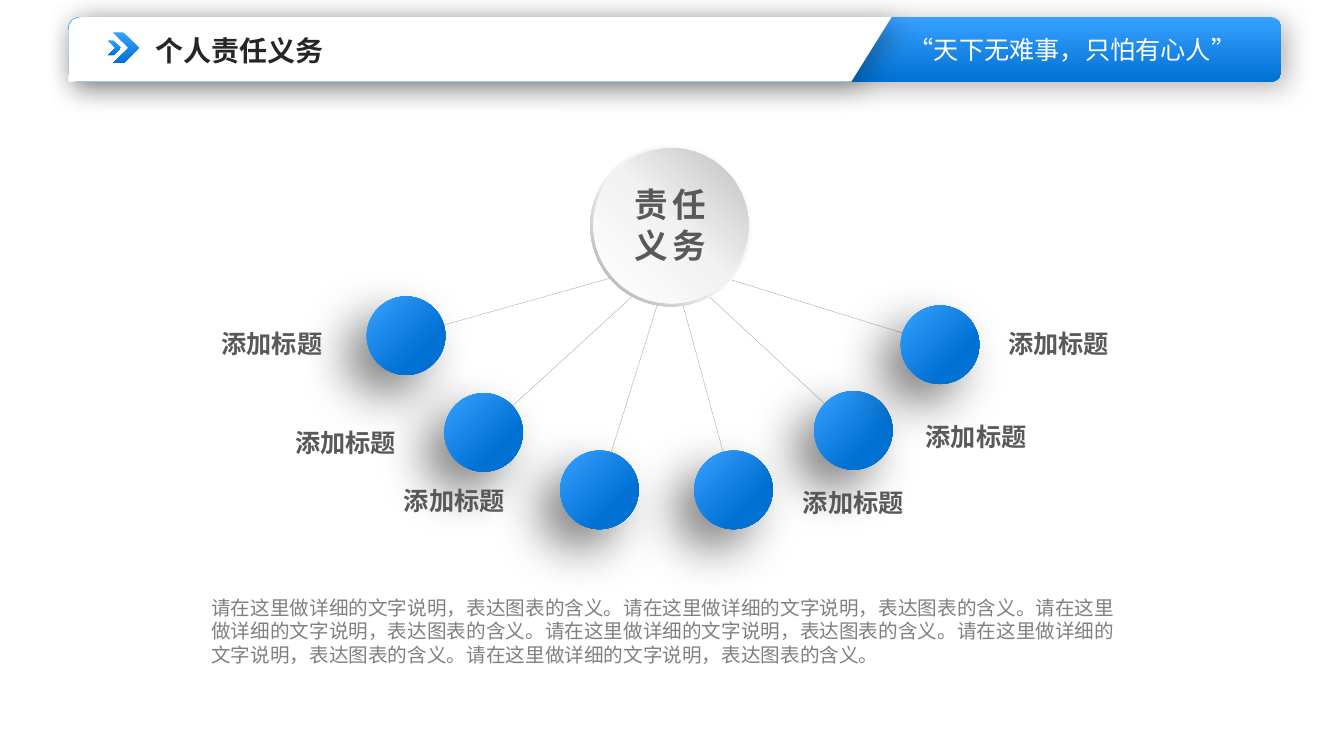
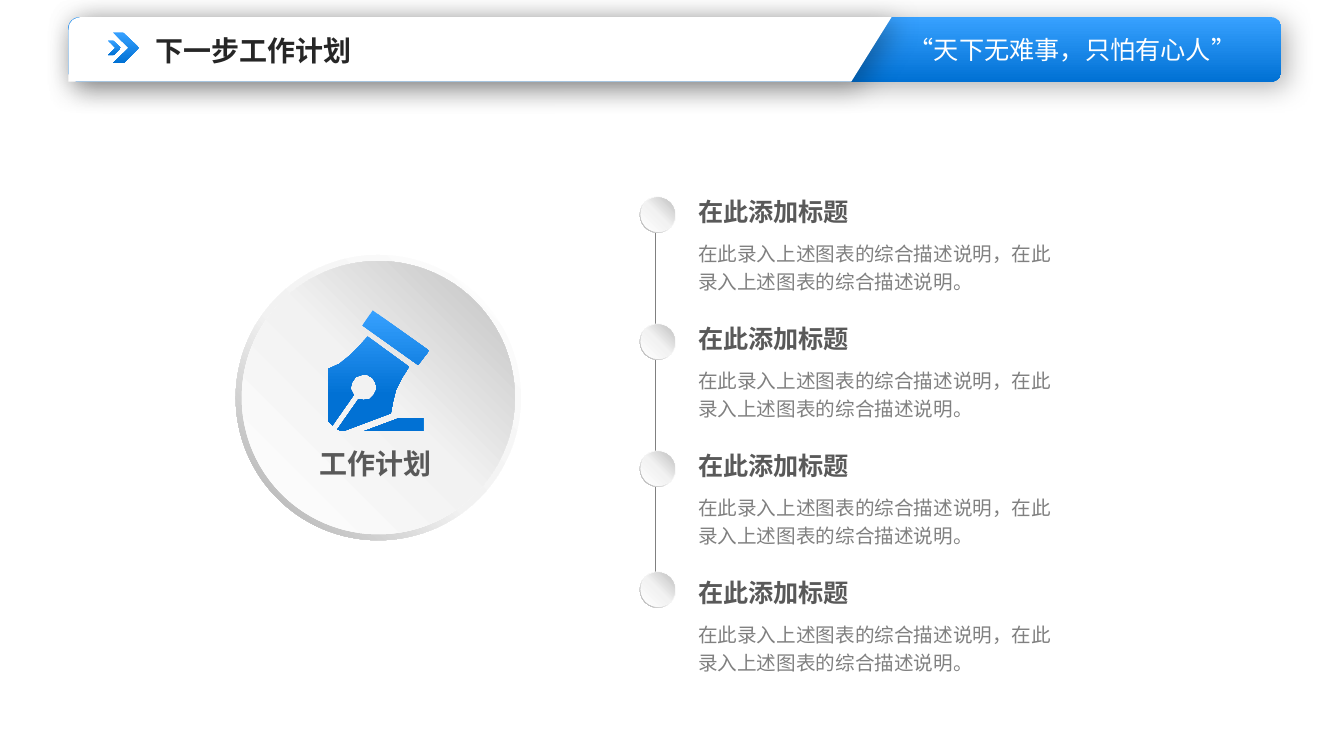
import pptx
import pptx.util
import pptx.oxml
import pptx.oxml.ns
import pptx.dml.color
import pptx.enum.shapes
import pptx.enum.text
import lxml.etree

px = 9144  # EMU in one px, 100 px to the inch
qn = pptx.oxml.ns.qn
Pt = pptx.util.Pt
RGB = pptx.dml.color.RGBColor.from_string
Kind = pptx.enum.shapes.MSO_SHAPE
Align = pptx.enum.text.PP_ALIGN


class Theme:
    font = "Noto Sans CJK SC"
    white, ink, dark, grey, pale = "FFFFFF", "262626", "595959", "808080", "A6A6A6"
    # Fills: gradient stops and clockwise angle
    bar = [(0, "37A1FF"), (100, "0171D4")], 90
    ball = [(0, "37A1FF"), (70, "0171D4")], 45
    pen = [(0, "37A1FF"), (70, "0171D4")], 90
    ring = [(0, "FFFFFF"), (55, "F2F2F2"), (100, "A6A6A6")], 135
    disc = [(0, "FFFFFF"), (51, "F2F2F2"), (100, "BFBFBF")], 315
    # Shadows: opacity, blur, distance, angle
    soft = 30, 20, 5, 45
    deep = 50, 35, 20, 135
    # Type sizes
    hub, title, head, body = 24, 20, 18, 14


def paint(shape, fill, shadow=None):
    """Fill a shape with a colour or gradient, without outline."""
    shape.shadow.inherit = False
    shape.line.fill.background()
    props = shape.element.spPr
    if isinstance(fill, str):
        shape.fill.solid()
        shape.fill.fore_color.rgb = RGB(fill)
    else:
        stops, angle = fill
        marks = "".join(f'<a:gs pos="{at * 1000}"><a:srgbClr val="{tint}"/></a:gs>'
                        for at, tint in stops)
        shape.fill.background()
        props.replace(props.find(qn("a:noFill")), pptx.oxml.parse_xml(
            f'<a:gradFill {pptx.oxml.ns.nsdecls("a")} rotWithShape="1"><a:gsLst>{marks}</a:gsLst>'
            f'<a:lin ang="{angle * 60000}" scaled="0"/></a:gradFill>'))
    if shadow:
        alpha, blur, far, turn = shadow
        props.find(qn("a:effectLst")).append(pptx.oxml.parse_xml(
            f'<a:outerShdw {pptx.oxml.ns.nsdecls("a")} blurRad="{Pt(blur)}" dist="{Pt(far)}" '
            f'dir="{turn * 60000}" algn="ctr" rotWithShape="0"><a:srgbClr val="000000">'
            f'<a:alpha val="{alpha * 1000}"/></a:srgbClr></a:outerShdw>'))


def write(slide, box, text, size, tint, bold=False, wrap=True, align=Align.LEFT,
          inset=(10, 5), lead=None, space=None):
    """Add a text box with one style throughout."""
    frame = slide.shapes.add_textbox(*(n * px for n in box)).text_frame
    frame.word_wrap = wrap
    frame.margin_left = frame.margin_right = inset[0] * px
    frame.margin_top = frame.margin_bottom = inset[1] * px
    frame.text = text
    for para in frame.paragraphs:
        para.alignment = align
        if lead:
            para.line_spacing = lead
        for run in para.runs:
            run.font.name = Theme.font
            run.font.size = Pt(size)
            run.font.bold = bold
            run.font.color.rgb = RGB(tint)
            props = run.font._element
            lxml.etree.SubElement(props, qn("a:ea")).set("typeface", Theme.font)
            if space:
                props.set("spc", str(space * 100))


deck = pptx.Presentation()
deck.slide_width, deck.slide_height = 1334 * px, 750 * px
blank = deck.slide_layouts[6]
for holder in list(blank.placeholders):
    holder.element.getparent().remove(holder.element)
duty = deck.slides.add_slide(blank)
plan = deck.slides.add_slide(blank)

# Shared header: drawn once, then moved to the layout
band = duty.shapes.add_shape(Kind.ROUNDED_RECTANGLE, 68 * px, 17 * px, 1204 * px, 64 * px)
paint(band, Theme.bar, Theme.soft)
edge = duty.shapes.build_freeform(80, 17, px)
edge.add_line_segments([(885, 17), (845, 81), (68, 81), (68, 30), (69, 24), (72, 20), (76, 18)])
paint(edge.convert_to_shape(), Theme.white, Theme.soft)
write(duty, (865, 29, 399, 40), "“天下无难事，只怕有心人”", Theme.head, Theme.white,
      align=Align.CENTER)
for x, y, w, h, bend in [(112, 32, 26, 31, 0.61), (107, 40, 13, 15, 0.59)]:
    mark = duty.shapes.add_shape(Kind.CHEVRON, x * px, y * px, w * px, h * px)
    mark.adjustments[0] = bend
    paint(mark, Theme.bar)
for part in list(duty.shapes):
    blank.shapes.element.append(part.element)

# Titles
for slide, title in [(duty, "个人责任义务"), (plan, "下一步工作计划")]:
    write(slide, (147, 29, 244, 41), title, Theme.title, Theme.ink, bold=True, inset=(7, 4))

# Lines: spokes from the hub to each ball, then the timeline
size = 78
balls = [(364, 294), (441, 390), (556, 447), (689, 447), (808, 388), (894, 303)]
links = [(duty, 666, 259, x + size // 2, y + size // 2, Theme.pale, 0.25) for x, y in balls]
step = 126
links += [(plan, 651, 220 + i * step, 651, 328 + i * step, Theme.grey, 0.75) for i in range(3)]
for slide, x1, y1, x2, y2, tint, width in links:
    link = slide.shapes.add_connector(pptx.enum.shapes.MSO_CONNECTOR.STRAIGHT,
                                      x1 * px, y1 * px, x2 * px, y2 * px)
    link.line.color.rgb = RGB(tint)
    link.line.width = Pt(width)
    lxml.etree.SubElement(link.element.spPr, qn("a:effectLst"))

# Balls and their labels
for x, y in balls:
    ball = duty.shapes.add_shape(Kind.OVAL, x * px, y * px, size * px, size * px)
    paint(ball, Theme.ball, Theme.deep)
for x, y in [(210, 321), (283, 419), (391, 477), (787, 479), (909, 413), (991, 321)]:
    write(duty, (x, y, 121, 40), "添加标题", Theme.head, Theme.dark, bold=True, wrap=False)

# Silver dials: a rim and a disc inside it
dials = [(duty, 586, 144, 160), (plan, 234, 253, 283)]
dials += [(plan, 635, y, 36) for y in (195, 321, 447, 567)]
for slide, x, y, wide in dials:
    rim = slide.shapes.add_shape(Kind.DONUT, x * px, y * px, wide * px, wide * px)
    rim.adjustments[0] = 0.05
    paint(rim, Theme.ring)
    gap = round(wide * 0.02)
    core = wide - 2 * gap
    disc = slide.shapes.add_shape(Kind.OVAL, (x + gap) * px, (y + gap) * px, core * px, core * px)
    paint(disc, Theme.disc)

# Duty slide: hub and description
write(duty, (620, 178, 96, 91), "责任\n义务", Theme.hub, Theme.dark, bold=True, wrap=False, space=3)
write(duty, (200, 586, 1097, 81),
      "请在这里做详细的文字说明，表达图表的含义。请在这里做详细的文字说明，表达图表的含义。请在这里\n"
      "做详细的文字说明，表达图表的含义。请在这里做详细的文字说明，表达图表的含义。请在这里做详细的\n"
      "文字说明，表达图表的含义。请在这里做详细的文字说明，表达图表的含义。",
      Theme.body, Theme.grey)

# Plan slide: pen icon made of nib, base and cap
nib = [(330, 422), (326, 418), (326, 366), (337, 361), (347, 353), (356, 344), (365, 334),
       (406, 364), (399, 375), (393, 387), (390, 399), (388, 410), (364, 419), (340, 428),
       (335, 426), (356, 396), (361, 397), (367, 396), (371, 392), (374, 386), (373, 380),
       (370, 375), (365, 372), (359, 372), (353, 374), (349, 380), (348, 386), (351, 392)]
base = [(361, 428), (420, 428), (420, 415), (396, 415)]
cap = [(415, 362), (426, 348), (370, 308), (360, 323)]
pen = plan.shapes.build_freeform(*nib[0], px)
pen.add_line_segments(nib[1:])
for piece in (base, cap):
    pen.move_to(*piece[0])
    pen.add_line_segments(piece[1:])
paint(pen.convert_to_shape(), Theme.pen)
write(plan, (273, 440, 200, 57), "工作计划", Theme.title, Theme.dark, bold=True,
      align=Align.CENTER, inset=(5, 3))

# Plan slide: four entries
for i in range(4):
    top = 190 + i * step
    write(plan, (683, top, 172, 40), "在此添加标题", Theme.head, Theme.dark, bold=True, wrap=False)
    write(plan, (683, top + 40, 378, 67), "在此录入上述图表的综合描述说明，在此录入上述图表的综合描述说明。",
          Theme.body, Theme.grey, lead=1.2)

deck.save("out.pptx")
